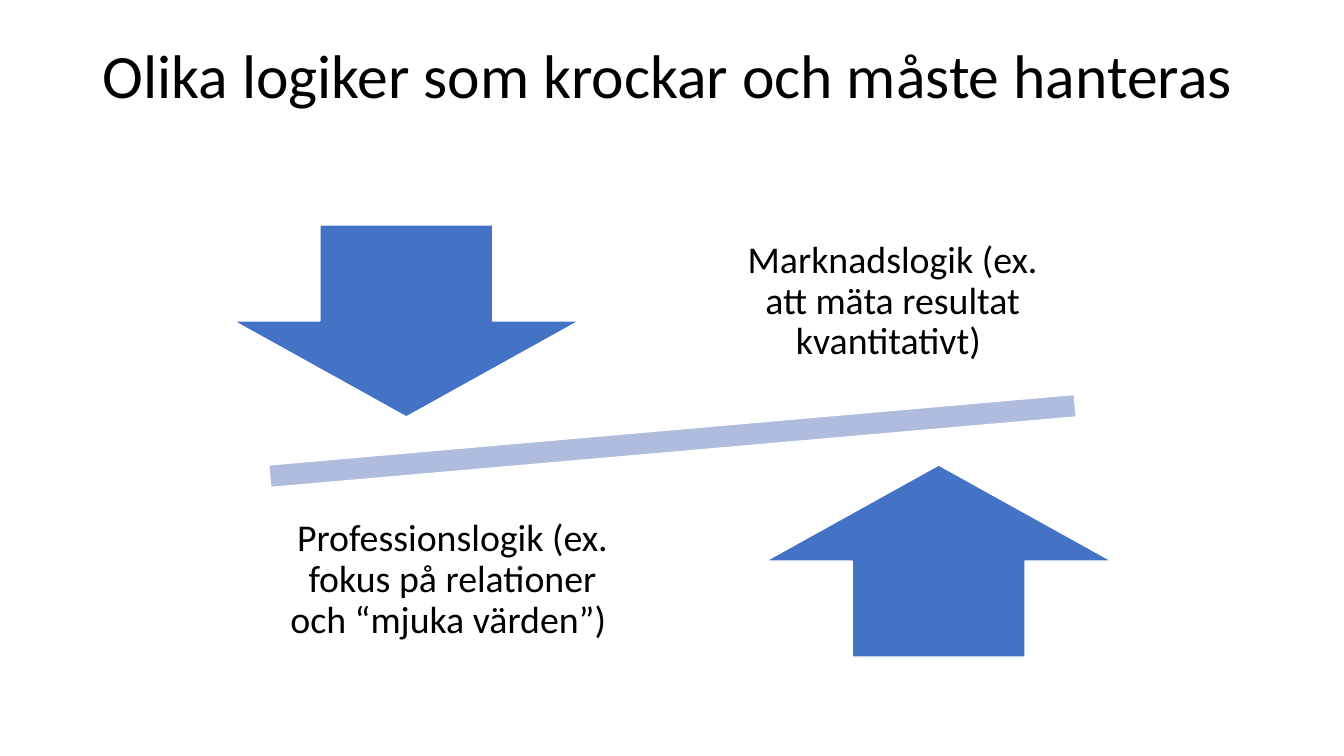
from pptx import Presentation
from pptx import util as u
from pptx.dml.color import RGBColor
from pptx.enum import shapes, text

COLORS = {"ink": "000000", "paper": "FFFFFF", "arrow": "4472C4", "beam": "B0BCDE"}
FONT = "Calibri"
LOGICS = [
    (1, shapes.MSO_SHAPE.DOWN_ARROW, "Marknadslogik (ex. att mäta resultat kvantitativt) "),
    (-1, shapes.MSO_SHAPE.UP_ARROW, "Professionslogik (ex. fokus på relationer och “mjuka värden”) "),
]


def color(name):
    return RGBColor.from_string(COLORS[name])


def centered(x, y, width, height):
    return [u.Inches(v) for v in (x - width / 2, y - height / 2, width, height)]


def add_text(slide, box, wording, size, align, anchor, inset=None):
    frame = slide.shapes.add_textbox(*box).text_frame
    frame.word_wrap = True
    frame.vertical_anchor = anchor
    if inset is not None:
        frame.margin_left = frame.margin_right = u.Inches(inset)
        frame.margin_top = frame.margin_bottom = u.Inches(inset)
    paragraph = frame.paragraphs[0]
    paragraph.text = wording
    paragraph.alignment = align
    paragraph.line_spacing = 0.9
    paragraph.font.name = FONT
    paragraph.font.size = u.Pt(size)
    paragraph.font.color.rgb = color("ink")


def add_solid(slide, preset, box, fill):
    solid = slide.shapes.add_shape(preset, *box)
    solid.shadow.inherit = False
    solid.fill.solid()
    solid.fill.fore_color.rgb = color(fill)
    solid.line.color.rgb = color("paper")
    solid.line.width = u.Pt(1)
    return solid


def add_title(slide, left, top, width, height):
    box = [u.Inches(v) for v in (left, top, width, height)]
    add_text(slide, box, "Olika logiker som krockar och måste hanteras", 44,
             text.PP_ALIGN.LEFT, text.MSO_ANCHOR.TOP)


def add_seesaw(slide, left, top, width, height):
    mid_x, mid_y = left + width / 2, top + height / 2
    arrow_width, arrow_height = width * 0.39, height * 0.44
    beam = add_solid(slide, shapes.MSO_SHAPE.MATH_MINUS,
                     centered(mid_x, mid_y, width * 1.24, height * 0.22), "beam")
    beam.rotation = 355
    for side, arrow, wording in LOGICS:
        add_solid(slide, arrow,
                  centered(mid_x - side * width * 0.3, mid_y - side * height * 0.275,
                           arrow_width, arrow_height), "arrow")
        add_text(slide,
                 centered(mid_x + side * width * 0.248, mid_y - side * height * 0.319,
                          width * 0.418, height * 0.462),
                 wording, 27, text.PP_ALIGN.CENTER, text.MSO_ANCHOR.MIDDLE, 0.21)


def main():
    deck = Presentation()
    deck.slide_width, deck.slide_height = u.Inches(13.33), u.Inches(7.5)
    slide = deck.slides.add_slide(deck.slide_layouts[6])
    add_title(slide, 0.92, 0.4, 11.5, 1.45)
    add_seesaw(slide, 2.27, 2.21, 8.8, 4.33)
    deck.save("out.pptx")


if __name__ == "__main__":
    main()
